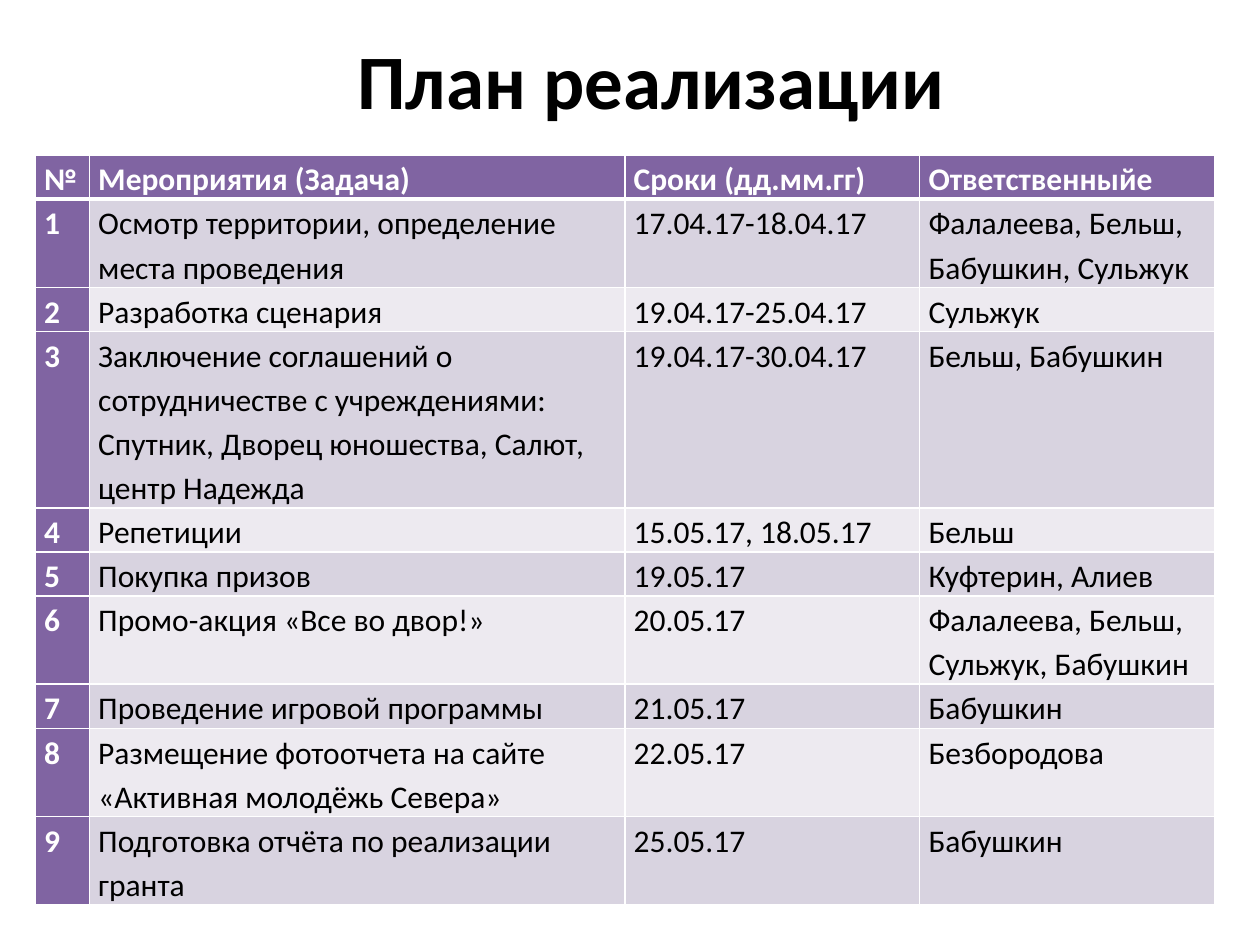
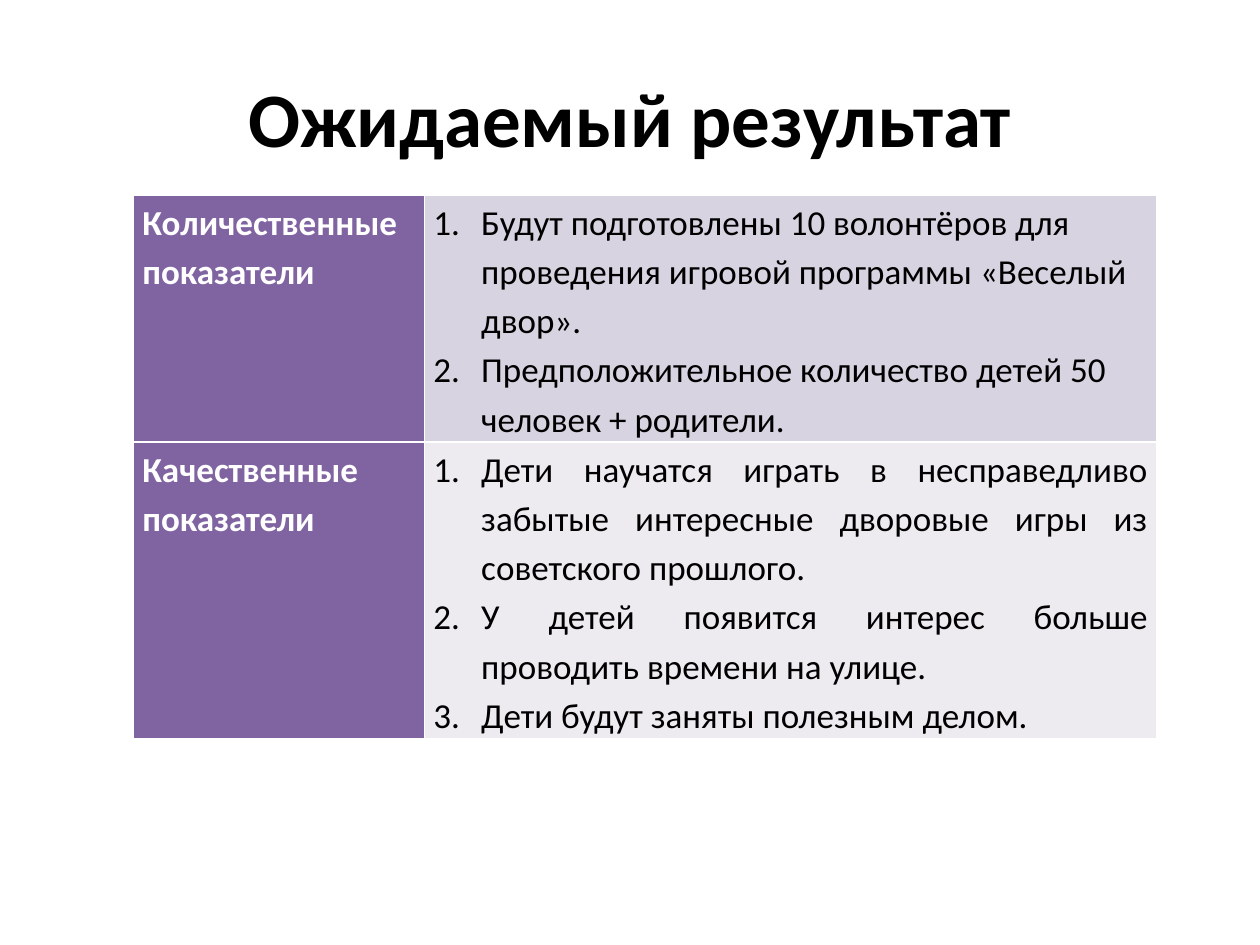
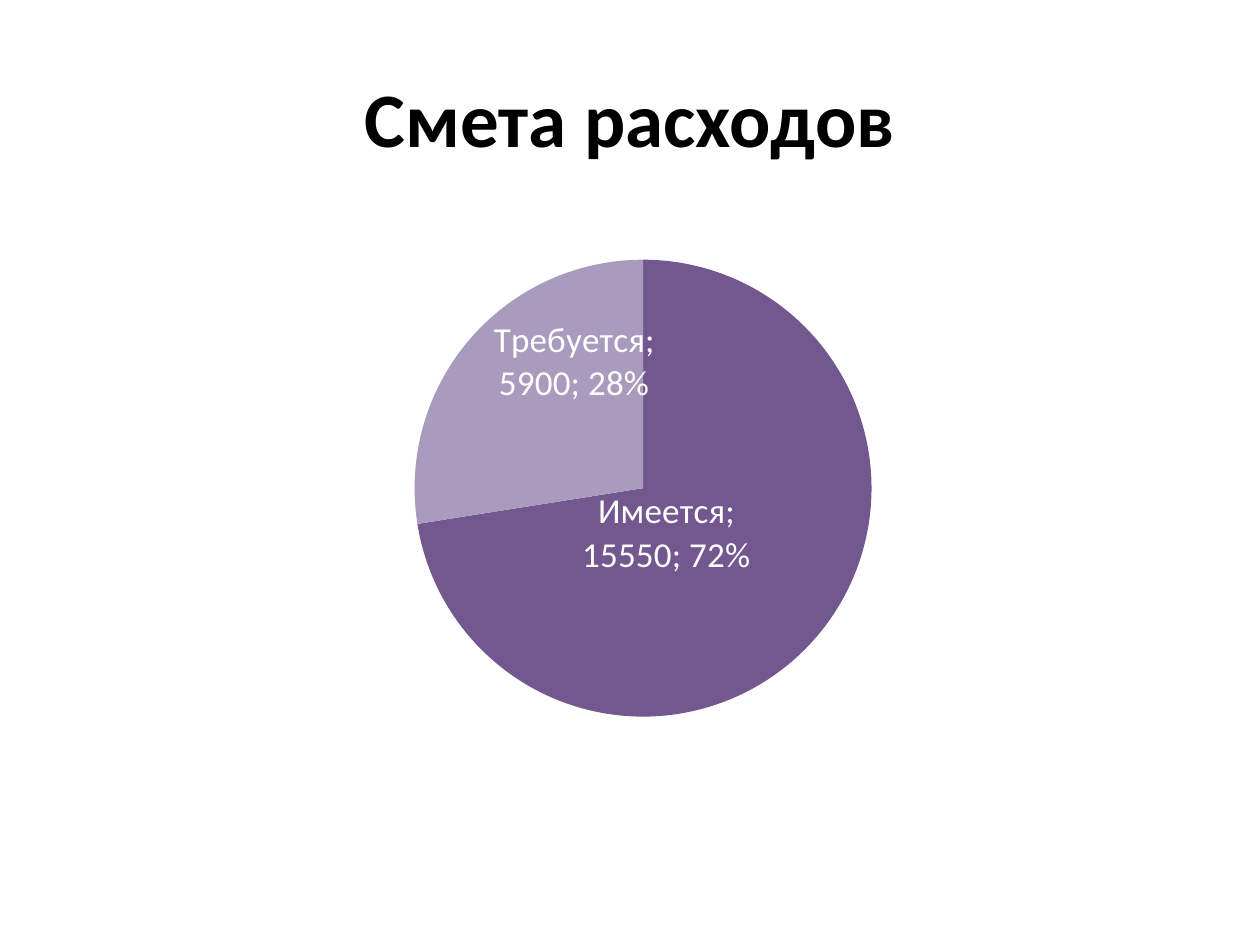
"""Build three slides of a youth project: plan, expected results and budget."""
from copy import deepcopy
from dataclasses import dataclass

from lxml import etree
from pptx import Presentation
from pptx import util as u
from pptx.chart.data import CategoryChartData
from pptx.dml.color import RGBColor
from pptx.enum import chart as ch, text
from pptx.oxml import parse_xml
from pptx.oxml.ns import nsdecls, qn


@dataclass(frozen=True)
class Theme:
    """Colours, font and type sizes shared by the slides."""
    font: str = "Calibri"
    ink: str = "000000"
    paper: str = "FFFFFF"
    accent: str = "8064A2"
    bands: tuple = ("D8D3E0", "EDEAF0")
    slices: tuple = ("72588F", "A99BBD")
    title: int = 44
    plan: int = 18
    result: int = 20
    label: int = 20
    spacing: float = 1.15


T = Theme()
TITLE_BOX = (0.5, 0.3, 9, 1.25)

PLAN = [
    ("№", "Мероприятия (Задача)", "Сроки (дд.мм.гг)", "Ответственныйе"),
    ("1", "Осмотр территории, определение места проведения",
     "17.04.17-18.04.17", "Фалалеева, Бельш, Бабушкин, Сульжук"),
    ("2", "Разработка сценария", "19.04.17-25.04.17", "Сульжук"),
    ("3", "Заключение соглашений о сотрудничестве с учреждениями: "
     "Спутник, Дворец юношества, Салют, центр Надежда",
     "19.04.17-30.04.17", "Бельш, Бабушкин"),
    ("4", "Репетиции", "15.05.17, 18.05.17", "Бельш"),
    ("5", "Покупка призов", "19.05.17", "Куфтерин, Алиев"),
    ("6", "Промо-акция «Все во двор!»", "20.05.17",
     "Фалалеева, Бельш, Сульжук, Бабушкин"),
    ("7", "Проведение игровой программы", "21.05.17", "Бабушкин"),
    ("8", "Размещение фотоотчета на сайте «Активная молодёжь Севера»",
     "22.05.17", "Безбородова"),
    ("9", "Подготовка отчёта по реализации гранта", "25.05.17", "Бабушкин"),
]
PLAN_LINES = (1, 2, 1, 4, 1, 1, 2, 1, 2, 2)

RESULTS = [
    ("Количественные показатели", text.PP_ALIGN.LEFT, (
        "Будут подготовлены 10 волонтёров для проведения игровой программы "
        "«Веселый двор».",
        "Предположительное количество детей 50 человек + родители.")),
    ("Качественные показатели", text.PP_ALIGN.JUSTIFY, (
        "Дети научатся играть в несправедливо забытые интересные дворовые "
        "игры из советского прошлого.",
        "У детей появится интерес больше проводить времени на улице.",
        "Дети будут заняты полезным делом.")),
]

BUDGET = {"Имеется": 15550, "Требуется": 5900}
LABEL_SHIFTS = ((-0.07, -0.05), (0.02, -0.09))


def rgb(value):
    """Return the colour for a hex string."""
    return RGBColor.from_string(value)


def write(tf, *lines, size, color=T.ink, bold=False, align=None, spacing=None,
          numbered=False):
    """Write one formatted paragraph per line into a text frame."""
    tf.word_wrap = True
    for i, line in enumerate(lines):
        p = tf.add_paragraph() if i else tf.paragraphs[0]
        p.alignment, p.line_spacing = align, spacing
        if numbered:
            pPr = p._p.get_or_add_pPr()
            pPr.set("marL", str(u.Inches(0.38)))
            pPr.set("indent", str(-u.Inches(0.38)))
            etree.SubElement(pPr, qn("a:buAutoNum"), type="arabicPeriod")
        r = p.add_run()
        r.text = line
        r.font.name, r.font.size, r.font.bold = T.font, u.Pt(size), bold
        r.font.color.rgb = rgb(color)


def add_title(s, caption, box=TITLE_BOX):
    """Place a centred slide title in the box."""
    tf = s.shapes.add_textbox(*map(u.Inches, box)).text_frame
    tf.vertical_anchor = text.MSO_ANCHOR.MIDDLE
    write(tf, caption, size=T.title, bold=True, align=text.PP_ALIGN.CENTER)


def add_grid(s, box, cols, rows):
    """Add a table with the given column widths and row heights."""
    frame = s.shapes.add_table(len(rows), len(cols), *map(u.Inches, box))
    for col, width in zip(frame.table.columns, cols):
        col.width = u.Inches(width)
    for row, height in zip(frame.table.rows, rows):
        row.height = u.Inches(height)
    return frame.table


def fill_cell(cell, *lines, fill, top=1, bottom=1, **fmt):
    """Fill a cell, rule its edges in white and write its text."""
    cell.margin_left = cell.margin_right = u.Inches(0.07)
    cell.margin_top = cell.margin_bottom = 0
    cell.fill.solid()
    cell.fill.fore_color.rgb = rgb(fill)
    tcPr = cell._tc.get_or_add_tcPr()
    edges = {"lnL": 1, "lnR": 1, "lnT": top, "lnB": bottom}
    for i, (edge, width) in enumerate(edges.items()):
        tcPr.insert(i, parse_xml(
            f'<a:{edge} {nsdecls("a")} w="{u.Pt(width)}"><a:solidFill>'
            f'<a:srgbClr val="{T.paper}"/></a:solidFill></a:{edge}>'))
    write(cell.text_frame, *lines, spacing=T.spacing, **fmt)


def plan_table(s, box):
    """Draw the schedule with a header row and a number column."""
    table = add_grid(s, box, (0.43, 4.25, 2.34, 2.34),
                     [0.35 * n for n in PLAN_LINES])
    for i, row in enumerate(PLAN):
        for j, value in enumerate(row):
            head = i == 0 or j == 0
            fill_cell(table.cell(i, j), value, size=T.plan, bold=head,
                      color=T.paper if head else T.ink,
                      fill=T.accent if head else T.bands[(i - 1) % 2],
                      top=3 if i == 1 else 1, bottom=3 if i == 0 else 1)


def result_table(s, box):
    """Draw the indicators with their numbered results."""
    table = add_grid(s, box, (2.31, 5.81), (1.96, 2.35))
    for i, (name, align, items) in enumerate(RESULTS):
        fill_cell(table.cell(i, 0), name, size=T.result, bold=True,
                  color=T.paper, fill=T.accent)
        fill_cell(table.cell(i, 1), *items, size=T.result, align=align,
                  numbered=True, fill=T.bands[i])


def manual_layout(inner="", **values):
    """Return a chart layout element with the given fractions."""
    parts = "".join(f'<c:{k} val="{v}"/>' for k, v in values.items())
    return parse_xml(f'<c:layout {nsdecls("c")}><c:manualLayout>{inner}{parts}'
                     '</c:manualLayout></c:layout>')


def label_slices(series):
    """Label each slice with name, value and share, moved by its shift."""
    labels = series.data_labels
    labels.show_category_name = labels.show_value = True
    labels.show_percentage = True
    labels.position = ch.XL_LABEL_POSITION.CENTER
    labels.font.name, labels.font.size = T.font, u.Pt(T.label)
    labels.font.color.rgb = rgb(T.paper)
    dLbls = labels._element
    separator = etree.Element(qn("c:separator"))
    separator.text = "; "
    dLbls.find(qn("c:showBubbleSize")).addnext(separator)
    leader = dLbls.find(qn("c:showLeaderLines"))
    if leader is not None:
        dLbls.remove(leader)
    shared = list(dLbls)
    for i, (x, y) in enumerate(LABEL_SHIFTS):
        dLbl = etree.Element(qn("c:dLbl"))
        etree.SubElement(dLbl, qn("c:idx"), val=str(i))
        dLbl.append(manual_layout(x=x, y=y))
        dLbl.extend(deepcopy(shared))
        dLbls.insert(i, dLbl)


def budget_pie(s, box):
    """Draw the budget as a pie chart."""
    data = CategoryChartData()
    data.categories = list(BUDGET)
    data.add_series("Series 1", list(BUDGET.values()))
    chart = s.shapes.add_chart(ch.XL_CHART_TYPE.PIE, *map(u.Inches, box),
                               data).chart
    chart.has_title = chart.has_legend = False
    chart.font.name, chart.font.size = T.font, u.Pt(T.plan)
    chart.font.color.rgb = rgb(T.ink)
    series = chart.plots[0].series[0]
    for i, color in enumerate(T.slices):
        fill = series.points[i].format.fill
        fill.solid()
        fill.fore_color.rgb = rgb(color)
    label_slices(series)
    area = chart._chartSpace.find(".//" + qn("c:plotArea"))
    for old in area.findall(qn("c:layout")):
        area.remove(old)
    area.insert(0, manual_layout(
        '<c:layoutTarget val="inner"/><c:xMode val="edge"/>'
        '<c:yMode val="edge"/>', x=0.24, y=0.11, w=0.51, h=0.78))


def main():
    """Build and save the presentation."""
    prs = Presentation()
    prs.slide_width, prs.slide_height = u.Inches(10), u.Inches(7.5)
    pages = (
        ("План реализации", (0.67, 0, 9, 1.25), plan_table,
         (0.28, 1.23, 9.37, 5.95)),
        ("Ожидаемый результат", TITLE_BOX, result_table,
         (1.06, 1.55, 8.11, 4.31)),
        ("Смета расходов", TITLE_BOX, budget_pie, (1.54, 1.55, 7.2, 4.65)),
    )
    for caption, title_box, draw, box in pages:
        s = prs.slides.add_slide(prs.slide_layouts[6])
        add_title(s, caption, title_box)
        draw(s, box)
    prs.save("out.pptx")


if __name__ == "__main__":
    main()
